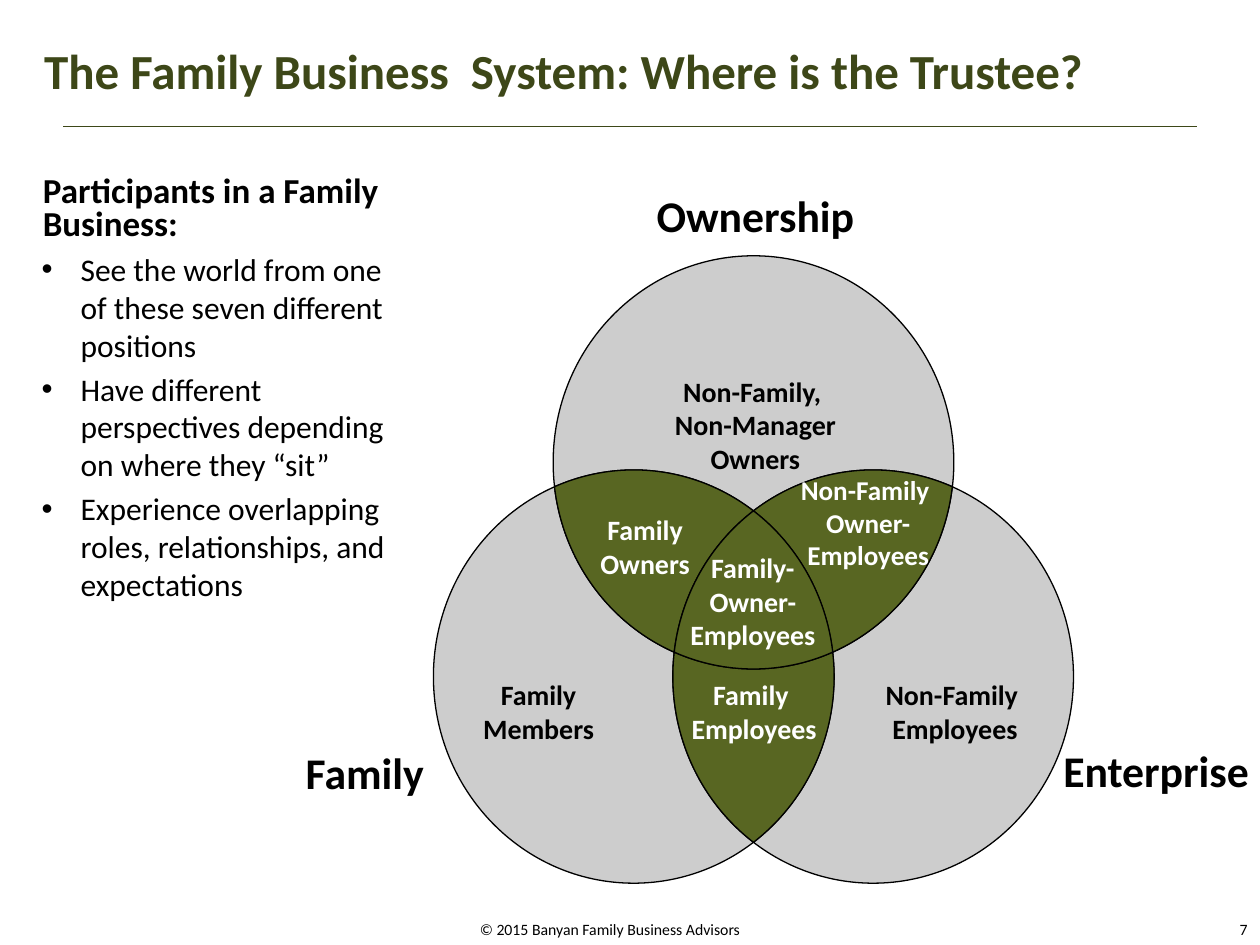
from math import atan2, cos, hypot, pi, sin, tan

from lxml.etree import Element, SubElement
from pptx import Presentation
from pptx.dml.color import RGBColor
from pptx.enum.shapes import MSO_CONNECTOR
from pptx.enum.text import MSO_ANCHOR, MSO_AUTO_SIZE, PP_ALIGN
from pptx.oxml.ns import qn
from pptx.util import Inches, Pt

OLIVE = RGBColor(0x3D, 0x47, 0x18)
GREEN = RGBColor(0x58, 0x66, 0x22)
GREY = RGBColor(0xCD, 0xCD, 0xCD)
BLACK = RGBColor(0, 0, 0)
WHITE = RGBColor(0xFF, 0xFF, 0xFF)
FONT = "Calibri"


def place(shape, box):
    shape.left, shape.top, shape.width, shape.height = map(Inches, box)


def add_run(p, text, size, color=BLACK, bold=False):
    r = p.add_run()
    r.text = text
    r.font.name, r.font.size, r.font.bold = FONT, Pt(size), bold
    r.font.color.rgb = color


def add_label(s, box, lines, size, color=BLACK, bold=True,
              align=PP_ALIGN.CENTER, wrap=False):
    tf = s.shapes.add_textbox(*map(Inches, box)).text_frame
    tf.word_wrap = wrap
    tf.auto_size = MSO_AUTO_SIZE.SHAPE_TO_FIT_TEXT
    for i, line in enumerate(lines):
        p = tf.add_paragraph() if i else tf.paragraphs[0]
        p.alignment = align
        add_run(p, line, size, color, bold)
    return tf


def add_title(s, box):
    title = s.shapes.title
    place(title, box)
    tf = title.text_frame
    tf.auto_size = MSO_AUTO_SIZE.NONE
    tf.vertical_anchor = MSO_ANCHOR.TOP
    p = tf.paragraphs[0]
    p.alignment = PP_ALIGN.LEFT
    add_run(p, "The Family Business  System: Where is the Trustee?", 28, OLIVE, True)

    # Rule below the title
    rule = s.shapes.add_connector(
        MSO_CONNECTOR.STRAIGHT, Inches(0.5), Inches(1), Inches(9.5), Inches(1))
    rule.line.color.rgb = OLIVE
    rule.line.width = Pt(0.25)
    SubElement(rule._element.spPr, qn("a:effectLst"))


def set_bullet(p, margin, indent, char=None):
    pPr = p._p.get_or_add_pPr()
    pPr.set("marL", str(Inches(margin)))
    pPr.set("indent", str(Inches(indent)))
    if char:
        SubElement(pPr, qn("a:buFont"), typeface="Arial")
        SubElement(pPr, qn("a:buChar"), char=char)
    else:
        SubElement(pPr, qn("a:buNone"))


def add_participants(s, box):
    body = s.placeholders[1]
    place(body, box)
    tf = body.text_frame
    tf.auto_size = MSO_AUTO_SIZE.NONE
    p = tf.paragraphs[0]
    set_bullet(p, 0.13, 0)
    p.line_spacing, p.space_before = 0.8, Pt(0)
    add_run(p, "Participants in a Family Business:", 20, bold=True)
    for text in ("See the world from one of these seven different positions",
                 "Have different perspectives depending on where they “sit”",
                 "Experience overlapping roles, relationships, and expectations"):
        p = tf.add_paragraph()
        p.level = 1
        set_bullet(p, 0.43, -0.31, "•")
        p.space_before = Pt(3.6)
        add_run(p, text, 18)


def crossings(a, b, middle):
    """Outer and inner crossing of two unit circles."""
    dx, dy = b[0] - a[0], b[1] - a[1]
    d = hypot(dx, dy)
    h = (1 - d * d / 4) ** 0.5 / d
    mx, my = (a[0] + b[0]) / 2, (a[1] + b[1]) / 2
    points = [(mx - k * dy, my + k * dx) for k in (h, -h)]
    points.sort(key=lambda q: -hypot(q[0] - middle[0], q[1] - middle[1]))
    return points


def arc(c, start, end, long=False):
    """Bezier points, three to a curve, along the unit circle around c."""
    a0 = atan2(start[1] - c[1], start[0] - c[0])
    sweep = (atan2(end[1] - c[1], end[0] - c[0]) - a0 + pi) % (2 * pi) - pi
    if long:
        sweep -= 2 * pi if sweep > 0 else -2 * pi
    low, high = sorted((a0, a0 + sweep))
    # Cut at the quadrants, so that each curve stays inside its box
    cuts = [n * pi / 2 for n in range(-8, 9) if low < n * pi / 2 < high]
    angles = sorted([low, *cuts, high], reverse=sweep < 0)
    points = []
    for t, u in zip(angles, angles[1:]):
        k = 4 / 3 * tan((u - t) / 4)
        points += [(c[0] + cos(t) - k * sin(t), c[1] + sin(t) + k * cos(t)),
                   (c[0] + cos(u) + k * sin(u), c[1] + sin(u) - k * cos(u)),
                   (c[0] + cos(u), c[1] + sin(u))]
    return points


def add_region(s, points, scale, fill):
    pts = [(Inches(x * scale[0]), Inches(y * scale[1])) for x, y in points]
    builder = s.shapes.build_freeform(*pts[-1])
    builder.add_line_segments(pts, close=True)
    region = builder.convert_to_shape()
    # Turn each three line segments into one curve
    segments = list(region._element.iter(qn("a:lnTo")))
    for i in range(0, len(segments), 3):
        curve = Element(qn("a:cubicBezTo"))
        segments[i].addprevious(curve)
        for segment in segments[i:i + 3]:
            curve.append(segment[0])
            segment.getparent().remove(segment)
    region.shadow.inherit = False
    region.fill.solid()
    region.fill.fore_color.rgb = fill
    region.line.color.rgb = BLACK
    region.line.width = Pt(0.75)


def add_venn(s, box):
    left, top, width, height = box
    rx, ry = 1.59, 1.64
    # Circle centres, in units of the radii
    x0, x1 = left / rx + 1, (left + width) / rx - 1
    y0, y1 = top / ry + 1, (top + height) / ry - 1
    circles = [((x0 + x1) / 2, y0), (x0, y1), (x1, y1)]
    middle = ((x0 + x1) / 2, (y0 + 2 * y1) / 3)

    single, double, core = [], [], []
    for i in (0, 2, 1):
        a, b, c = (circles[(i + k) % 3] for k in range(3))
        ab_out, ab_in = crossings(a, b, middle)
        bc_out, bc_in = crossings(b, c, middle)
        ca_out, ca_in = crossings(c, a, middle)
        single.append(arc(a, ca_out, ab_out, long=True)
                      + arc(b, ab_out, bc_in) + arc(c, bc_in, ca_out))
        double.append(arc(b, bc_out, ab_in) + arc(a, ab_in, ca_in)
                      + arc(c, ca_in, bc_out))
        core += arc(a, ab_in, ca_in)

    for points in single:
        add_region(s, points, (rx, ry), GREY)
    for points in double + [core]:
        add_region(s, points, (rx, ry), GREEN)


def add_venn_labels(s):
    # Positions inside the circles
    for box, lines, size, color, wrap in (
            ((5.09, 2.92, 1.81, 0.91), ["Non-Family, ", "Non-Manager Owners"], 16, BLACK, True),
            ((6.24, 3.71, 1.3, 0.91), ["Non-Family ", "Owner-", "Employees"], 15.5, WHITE, False),
            ((6.93, 5.33, 1.3, 0.64), ["Non-Family ", "Employees"], 16, BLACK, False),
            ((3.66, 5.33, 1.23, 0.64), ["Family Members"], 16, BLACK, True),
            ((4.53, 4.02, 1.18, 0.64), ["Family", "Owners"], 16, WHITE, True),
            ((5.36, 5.33, 1.25, 0.64), ["Family ", "Employees"], 16, WHITE, False),
            ((5.35, 4.32, 1.25, 0.91), ["Family-", "Owner-", "Employees"], 16, WHITE, False)):
        add_label(s, box, lines, size, color, wrap=wrap)
    # Names of the circles
    for box, name in (((2.3, 5.87, 1.19, 0.52), "Family"),
                      ((8.29, 5.85, 1.77, 0.52), "Enterprise"),
                      ((5.07, 1.45, 1.85, 0.52), "Ownership")):
        add_label(s, box, [name], 25)


def add_footer(s):
    add_label(s, (3.71, 7.25, 2.31, 0.25),
              ["© 2015 Banyan Family Business Advisors"], 9, bold=False,
              align=PP_ALIGN.LEFT)
    tf = add_label(s, (7.67, 7.1, 2.33, 0.4), ["7"], 9, bold=False,
                   align=PP_ALIGN.RIGHT, wrap=True)
    tf.auto_size = MSO_AUTO_SIZE.NONE
    tf.vertical_anchor = MSO_ANCHOR.BOTTOM


def main():
    prs = Presentation()
    prs.slide_width, prs.slide_height = Inches(10), Inches(7.5)
    s = prs.slides.add_slide(prs.slide_layouts[1])
    add_title(s, (0.25, 0.27, 9.7, 0.73))
    add_participants(s, (0.11, 1.35, 3.14, 3.65))
    add_venn(s, (3.44, 2.03, 5.08, 4.98))
    add_venn_labels(s)
    add_footer(s)
    prs.save("out.pptx")


if __name__ == "__main__":
    main()
